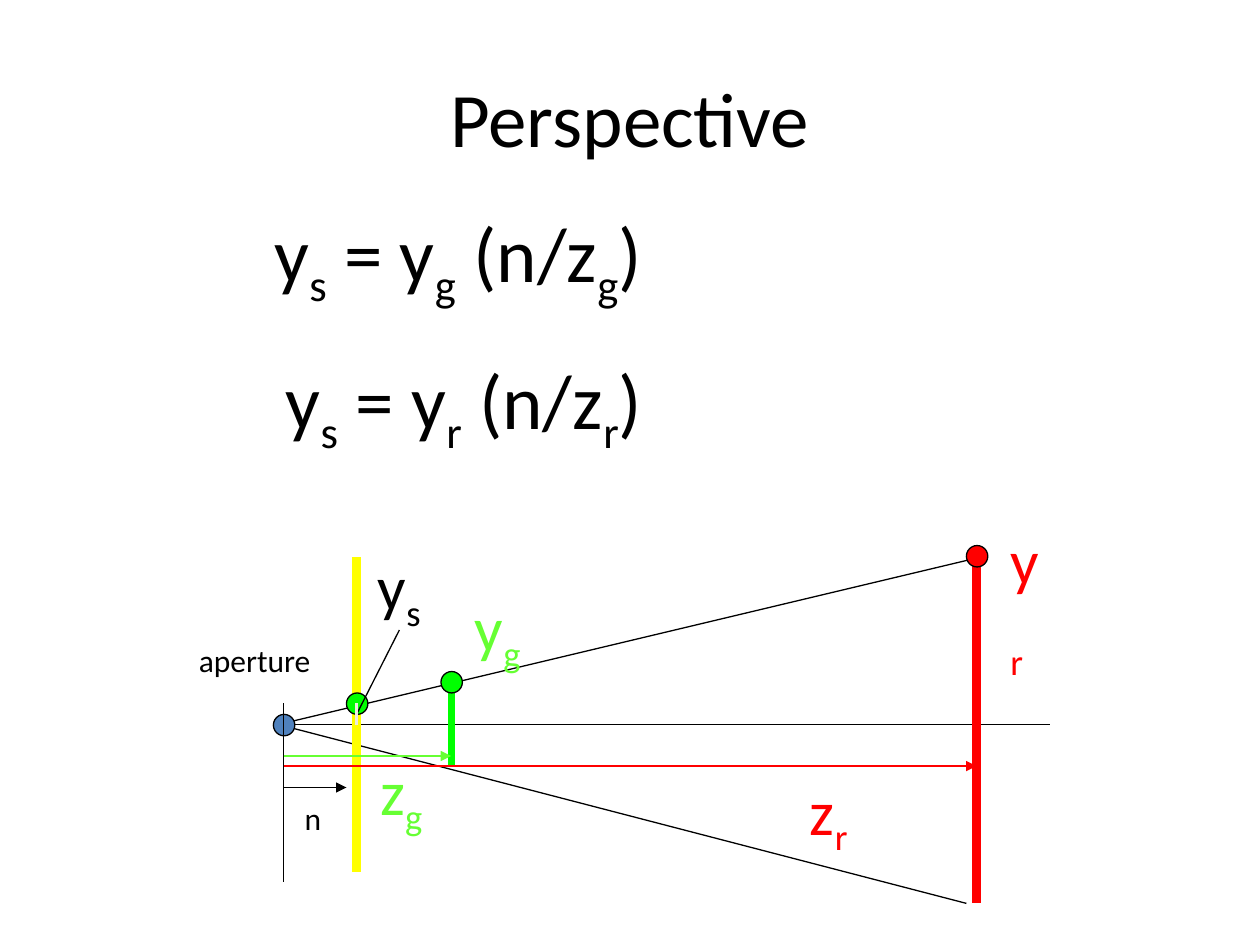
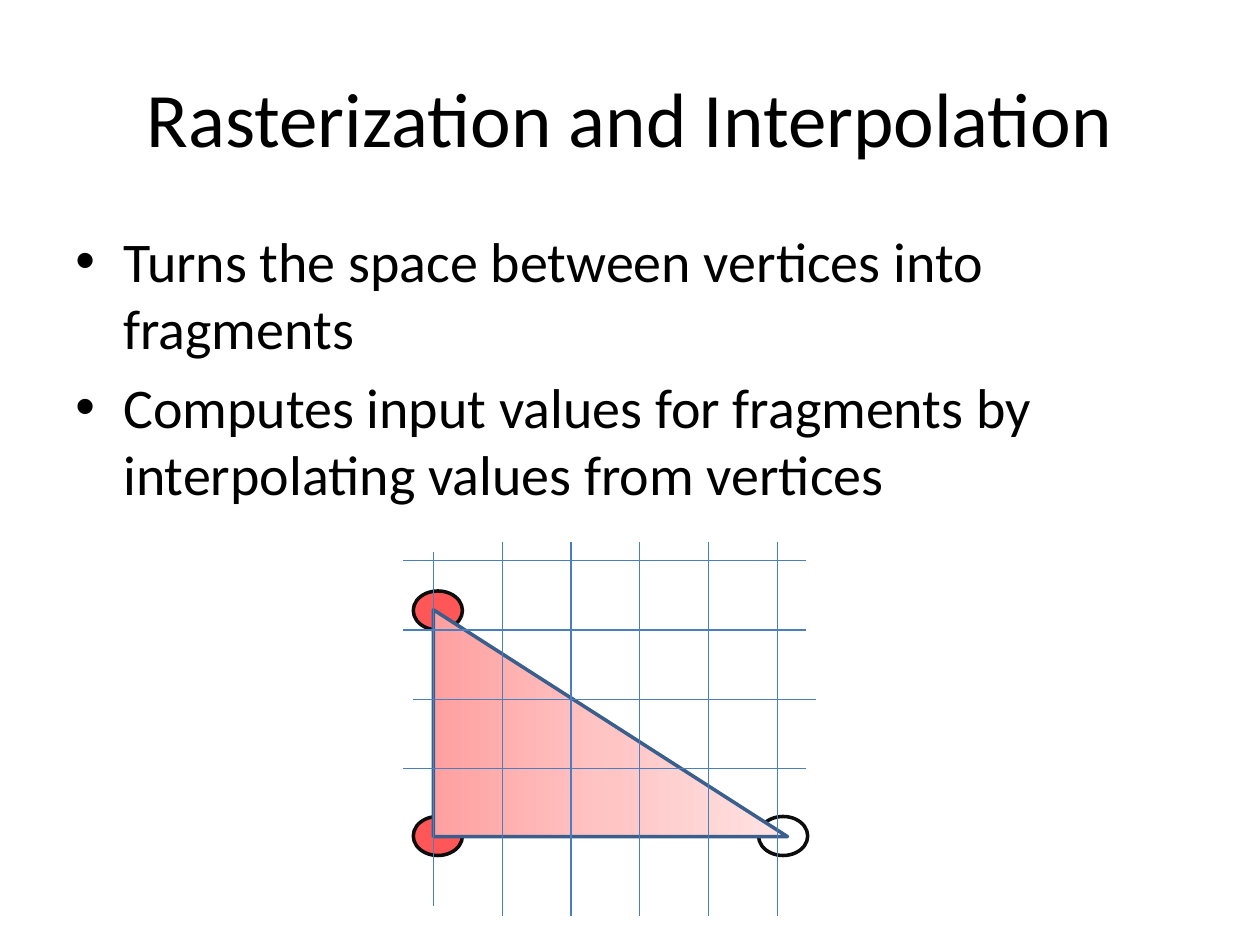
from copy import deepcopy

from lxml.etree import SubElement
from pptx import Presentation
from pptx.dml.color import RGBColor
from pptx.enum.shapes import MSO_CONNECTOR, MSO_SHAPE
from pptx.enum.text import MSO_ANCHOR, MSO_AUTO_SIZE, PP_ALIGN
from pptx.oxml.ns import qn
from pptx.util import Inches, Pt

FONT = "Calibri"
BLACK = RGBColor(0x00, 0x00, 0x00)
WHITE = RGBColor(0xFF, 0xFF, 0xFF)
RED = RGBColor(0xFF, 0x00, 0x00)
GREEN = RGBColor(0x00, 0xFF, 0x00)
LIGHT_GREEN = RGBColor(0x66, 0xFF, 0x33)
YELLOW = RGBColor(0xFF, 0xFF, 0x00)
BLUE = RGBColor(0x4F, 0x81, 0xBD)
CREAM = RGBColor(0xEE, 0xEC, 0xE1)
OUTLINE = RGBColor(0x0D, 0x0D, 0x0D)
GRID_BLUE = RGBColor(0x4B, 0x7E, 0xBC)
EDGE_BLUE = RGBColor(0x3A, 0x5F, 0x8C)
RED_FADE = [(0, RGBColor(0xFF, 0xA0, 0xA0)), (0.5, RGBColor(0xFF, 0xC5, 0xC5)),
            (1, RGBColor(0xFF, 0xE3, 0xE3))]


def add_run(paragraph, text, size, color, subscript=False):
    run = paragraph.add_run()
    run.text = text
    run.font.name = FONT
    run.font.size = Pt(size)
    run.font.color.rgb = color
    if subscript:
        run.font._element.set("baseline", "-25000")


def write_text(paragraph, text, size=18, color=BLACK, align=PP_ALIGN.LEFT):
    """Write text in which an underscore lowers the next letter."""
    paragraph.alignment = align
    first, *lowered = text.split("_")
    add_run(paragraph, first, size, color)
    for part in lowered:
        add_run(paragraph, part[0], size, color, subscript=True)
        if part[1:]:
            add_run(paragraph, part[1:], size, color)


class Deck:
    def __init__(self):
        self.presentation = Presentation()
        self.presentation.slide_width = Inches(10)
        self.presentation.slide_height = Inches(7.5)
        self.slide = None

    def new_slide(self, title):
        layout = self.presentation.slide_layouts[6]
        self.slide = self.presentation.slides.add_slide(layout)
        frame = self.text_frame(0.5, 0.3, 9, 1.25)
        frame.vertical_anchor = MSO_ANCHOR.MIDDLE
        write_text(frame.paragraphs[0], title, size=44, align=PP_ALIGN.CENTER)

    def text_frame(self, left, top, width, height, wrap=True):
        box = self.slide.shapes.add_textbox(
            Inches(left), Inches(top), Inches(width), Inches(height))
        box.text_frame.word_wrap = wrap
        return box.text_frame

    def label(self, text, left, top, width, height, wrap=False, **style):
        frame = self.text_frame(left, top, width, height, wrap)
        frame.auto_size = MSO_AUTO_SIZE.SHAPE_TO_FIT_TEXT
        write_text(frame.paragraphs[0], text, **style)

    def bullets(self, items, left, top, width, height, size=32):
        frame = self.text_frame(left, top, width, height)
        for index, item in enumerate(items):
            paragraph = frame.add_paragraph() if index else frame.paragraphs[0]
            write_text(paragraph, item, size=size)
            paragraph.space_before = Pt(size * 0.2)
            properties = paragraph._p.get_or_add_pPr()
            properties.set("marL", str(Inches(0.38)))
            properties.set("indent", str(-Inches(0.38)))
            SubElement(properties, qn("a:buFont"), typeface="Arial")
            SubElement(properties, qn("a:buChar"), char="•")

    def line(self, start, end, color=BLACK, width=0.75, arrow=False):
        connector = self.slide.shapes.add_connector(
            MSO_CONNECTOR.STRAIGHT, *map(Inches, start + end))
        connector.line.color.rgb = color
        connector.line.width = Pt(width)
        if arrow:
            SubElement(connector.line._get_or_add_ln(), qn("a:tailEnd"), type="triangle")
        SubElement(connector._element.spPr, qn("a:effectLst"))

    def shape(self, kind, left, top, width, height, outline=BLACK, line_width=0.75):
        shape = self.slide.shapes.add_shape(
            kind, Inches(left), Inches(top), Inches(width), Inches(height))
        shape.shadow.inherit = False
        shape.line.color.rgb = outline
        shape.line.width = Pt(line_width)
        return shape

    def ellipse(self, left, top, width, height, fill, opacity=100, **outline):
        ellipse = self.shape(MSO_SHAPE.OVAL, left, top, width, height, **outline)
        ellipse.fill.solid()
        ellipse.fill.fore_color.rgb = fill
        if opacity < 100:
            color = ellipse._element.spPr.find(qn("a:solidFill"))[0]
            SubElement(color, qn("a:alpha"), val=str(opacity * 1000))

    def dot(self, left, top, fill):
        self.ellipse(left, top, 0.17, 0.17, fill)

    def fading_triangle(self, left, top, width, height, stops, **outline):
        triangle = self.shape(MSO_SHAPE.RIGHT_TRIANGLE, left, top, width, height, **outline)
        triangle.fill.gradient()
        triangle.fill.gradient_angle = 0
        stop_list = triangle._element.spPr.find(qn("a:gradFill")).find(qn("a:gsLst"))
        stop_list.append(deepcopy(stop_list[0]))
        for stop, (position, color) in zip(triangle.fill.gradient_stops, stops):
            stop.position = position
            stop.color.rgb = color


def perspective_slide(deck):
    deck.new_slide("Perspective")

    # Axis, rays and the two objects
    deck.line((2.25, 5.75), (8.33, 5.75))
    deck.line((2.21, 5.75), (7.79, 4.42))
    deck.line((2.21, 5.75), (7.67, 7.17))
    deck.line((3.58, 5.42), (3.58, 6.08), GREEN, 4)
    deck.line((7.75, 4.42), (7.75, 7.17), RED, 5)

    # Aperture, screen and projected points
    deck.label("aperture", 1.48, 5.04, 1.22, 0.5)
    deck.dot(2.17, 5.67, BLUE)
    deck.line((2.83, 4.42), (2.83, 6.92), YELLOW, 5)
    deck.dot(3.5, 5.33, GREEN)
    deck.dot(7.67, 4.33, RED)
    deck.label("y_g", 3.67, 4.62, 0.94, 0.71, wrap=True, size=36, color=LIGHT_GREEN)
    deck.label("y_r", 7.92, 4.09, 0.5, 0.7, wrap=True, size=36, color=RED)
    deck.dot(2.75, 5.5, GREEN)

    # Distances from the aperture
    deck.label("n", 2.32, 6.29, 0.35, 0.5)
    deck.label("z_g", 2.92, 5.92, 0.85, 0.7, wrap=True, size=36, color=LIGHT_GREEN)
    deck.line((2.25, 6.25), (2.75, 6.25), arrow=True)
    deck.line((2.25, 5.58), (2.25, 7))
    deck.line((2.25, 6), (3.58, 6), LIGHT_GREEN, arrow=True)

    # Screen height
    deck.label("y_s", 2.9, 4.3, 0.54, 0.7, size=36)
    deck.line((2.83, 5.67), (3.17, 5))
    deck.line((2.83, 5.75), (2.83, 5.58), CREAM, 2)
    deck.line((2.25, 6.08), (7.75, 6.08), RED, arrow=True)
    deck.label("z_r", 6.33, 6.08, 0.5, 0.7, size=36, color=RED)

    # Equations
    deck.label("y_s = y_g (n/z_g)", 2.08, 1.58, 4.71, 0.84, wrap=True, size=44)
    deck.label("y_s = y_r (n/z_r)", 2.17, 2.75, 4.24, 0.84, wrap=True, size=44)


def rasterization_slide(deck):
    deck.new_slide("Rasterization and Interpolation")
    deck.bullets(["Turns the space between vertices into fragments",
                  "Computes input values for fragments by interpolating values from vertices"],
                 0.5, 1.75, 9, 4.95)

    # Vertices and the triangle between them
    for left, top, fill, opacity in [(3.28, 6.48, RED, 66), (3.28, 4.69, RED, 66),
                                     (6.02, 6.48, WHITE, 100)]:
        deck.ellipse(left, top, 0.39, 0.31, fill, opacity, outline=OUTLINE, line_width=2)
    deck.fading_triangle(3.44, 4.84, 2.81, 1.8, RED_FADE, outline=EDGE_BLUE, line_width=2)

    # Pixel grid: the first column starts lower, the third row sits further right
    for column in range(6):
        x = 3.44 + column * 2.73 / 5
        top, bottom = (4.3, 7.27) if column else (4.38, 7.19)
        deck.line((x, top), (x, bottom), GRID_BLUE)
    for row in range(4):
        y = 4.45 + row * 0.55
        left = 3.28 if row == 2 else 3.2
        deck.line((left, y), (left + 3.2, y), GRID_BLUE)


def main():
    deck = Deck()
    perspective_slide(deck)
    rasterization_slide(deck)
    deck.presentation.save("out.pptx")


if __name__ == "__main__":
    main()
